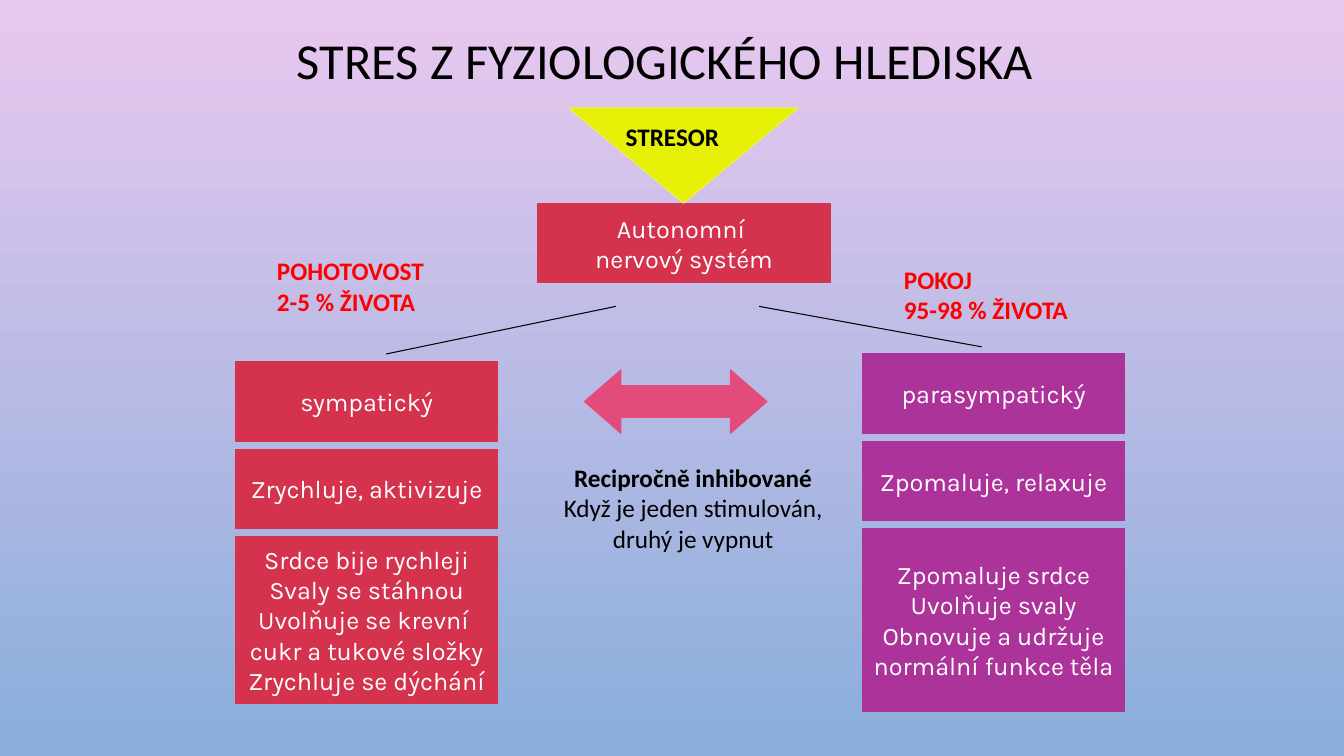
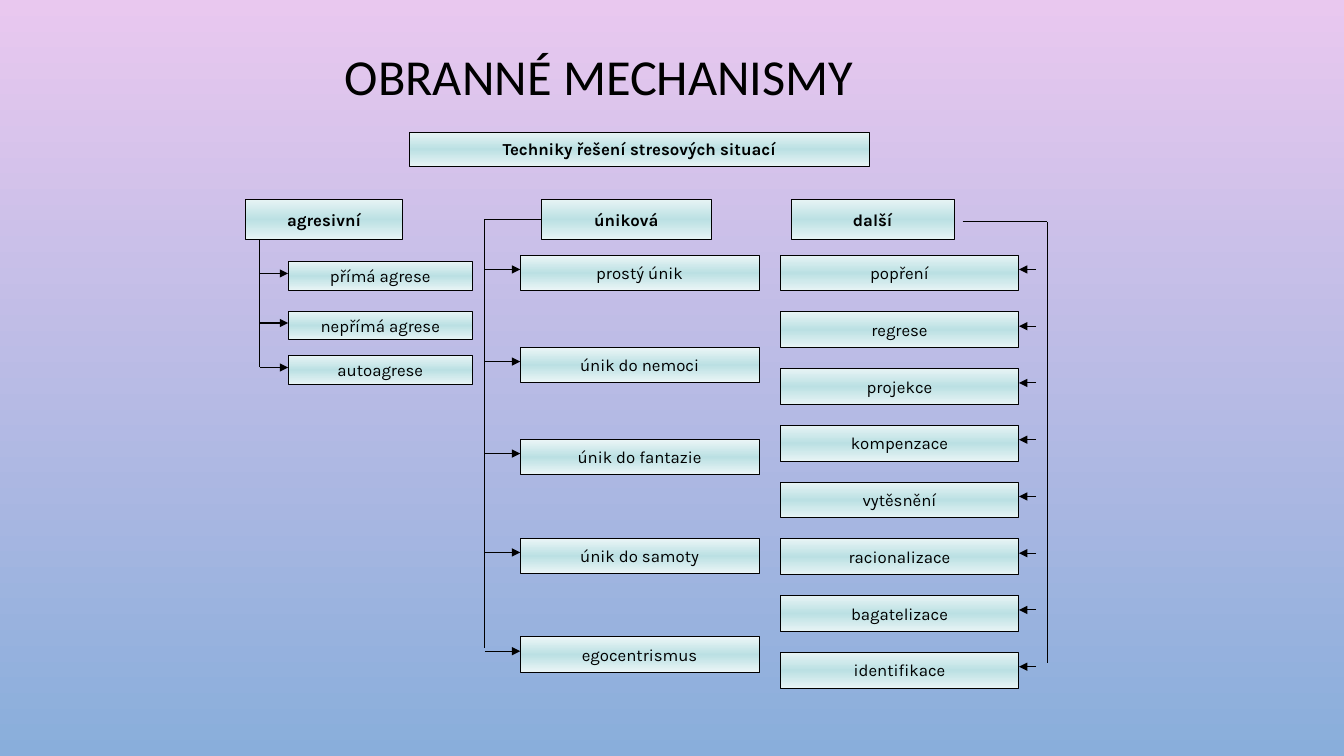
from copy import deepcopy

from lxml import etree
from pptx import Presentation
from pptx.dml.color import RGBColor
from pptx.enum.shapes import MSO_CONNECTOR, MSO_SHAPE
from pptx.enum.text import MSO_ANCHOR, MSO_AUTO_SIZE, PP_ALIGN
from pptx.oxml.ns import qn
from pptx.util import Cm, Pt

RECTANGLE = MSO_SHAPE.RECTANGLE
TRIANGLE = MSO_SHAPE.ISOSCELES_TRIANGLE
DOUBLE_ARROW = MSO_SHAPE.LEFT_RIGHT_ARROW
STRAIGHT = MSO_CONNECTOR.STRAIGHT
LEFT, CENTER = PP_ALIGN.LEFT, PP_ALIGN.CENTER
MIDDLE = MSO_ANCHOR.MIDDLE
GROW = MSO_AUTO_SIZE.SHAPE_TO_FIT_TEXT
TITLE_ONLY = 5
LEFT_SIDE = 1

BLACK = RGBColor(0x00, 0x00, 0x00)
WHITE = RGBColor(0xFF, 0xFF, 0xFF)
RED = RGBColor(0xFF, 0x00, 0x00)
CRIMSON = RGBColor(0xD4, 0x32, 0x4D)
PURPLE = RGBColor(0xAC, 0x33, 0x9A)
PINK = RGBColor(0xE3, 0x4B, 0x7A)
YELLOW = RGBColor(0xE6, 0xF1, 0x07)
PALE_YELLOW = RGBColor(0xEB, 0xF3, 0x4B)
SKY_TOP = RGBColor(0xE9, 0xC8, 0xEF)
SKY_BOTTOM = RGBColor(0x89, 0xAE, 0xDB)
TEAL = RGBColor(0xBB, 0xE0, 0xE3)
PALE_TEAL = RGBColor(0xE7, 0xF4, 0xF5)
PALER_TEAL = RGBColor(0xEC, 0xF6, 0xF7)


def place(shape, left, top, width, height):
    shape.left, shape.top = Cm(left), Cm(top)
    shape.width, shape.height = Cm(width), Cm(height)


def fill_downwards(fill, colors):
    """Colour the stops of a top-to-bottom gradient already on the fill."""
    fill.gradient_angle = 270
    for stop, color in zip(fill.gradient_stops, colors):
        stop.color.rgb = color


class Deck:
    TITLE_FONT = "Calibri"
    BOX_FONT = "Karla"
    LINE_WIDTH = Pt(0.75)

    def __init__(self):
        self.presentation = Presentation()
        self.presentation.slide_width = Cm(33.87)
        self.presentation.slide_height = Cm(19.05)
        background = self.presentation.slide_master.background.fill
        background.gradient()
        fill_downwards(background, (SKY_TOP, SKY_BOTTOM))
        self.slide = None

    def new_slide(self, title, *position):
        layout = self.presentation.slide_layouts[TITLE_ONLY]
        self.slide = self.presentation.slides.add_slide(layout)
        shape = self.slide.shapes.title
        place(shape, *position)
        shape.text_frame.vertical_anchor = MIDDLE
        self.set_text(shape, title, self.TITLE_FONT, 36, BLACK)
        shape.text_frame.paragraphs[0].line_spacing = 0.9

    def set_text(self, shape, text, font, size, color, align=CENTER, bold_lines=0):
        """Fill the shape with text; the first bold_lines lines are bold."""
        shape.text_frame.text = text
        for index, paragraph in enumerate(shape.text_frame.paragraphs):
            paragraph.alignment = align
            for run in paragraph.runs:
                run.font.name = font
                run.font.size = Pt(size)
                run.font.color.rgb = color
                run.font.bold = index < bold_lines

    def shape(self, kind, position, color, line_color=None):
        shape = self.slide.shapes.add_shape(kind, *map(Cm, position))
        shape.shadow.inherit = False
        shape.fill.solid()
        shape.fill.fore_color.rgb = color
        shape.line.color.rgb = line_color or color
        shape.line.width = self.LINE_WIDTH
        return shape

    def panel(self, text, position, color):
        panel = self.shape(RECTANGLE, position, color)
        panel.text_frame.word_wrap = False
        panel.text_frame.vertical_anchor = MIDDLE
        self.set_text(panel, text, self.BOX_FONT, 18, WHITE)

    def panel_stack(self, left, top, color, rows):
        for text, height in rows:
            self.panel(text, (left, top, 6.6, height), color)
            top += height + 0.2

    def gradient_box(self, text, position, edge=PALE_TEAL, bold=False):
        box = self.shape(RECTANGLE, position, TEAL, BLACK)
        box.fill.gradient()
        stops = box._element.spPr.find(qn("a:gradFill")).find(qn("a:gsLst"))
        middle = deepcopy(stops[0])
        middle.set("pos", "50000")
        stops.insert(1, middle)
        fill_downwards(box.fill, (edge, TEAL, edge))
        frame = box.text_frame
        frame.margin_left = frame.margin_right = Cm(0.2)
        frame.margin_top = frame.margin_bottom = Cm(0.1)
        frame.word_wrap = True
        frame.vertical_anchor = MIDDLE
        self.set_text(box, text, self.BOX_FONT, 12, BLACK, bold_lines=int(bold))
        return box

    def label(self, text, position, color=BLACK, align=LEFT, bold_lines=2):
        label = self.slide.shapes.add_textbox(*map(Cm, position))
        label.text_frame.word_wrap = False
        label.text_frame.auto_size = GROW
        self.set_text(label, text, self.TITLE_FONT, 18, color, align, bold_lines)

    def line(self, start_x, start_y, end_x, end_y, arrow=False):
        ends = map(Cm, (start_x, start_y, end_x, end_y))
        connector = self.slide.shapes.add_connector(STRAIGHT, *ends)
        connector.line.color.rgb = BLACK
        connector.line.width = self.LINE_WIDTH
        properties = connector._element.spPr
        if arrow:
            line = properties.find(qn("a:ln"))
            etree.SubElement(line, qn("a:tailEnd"), type="triangle")
        etree.SubElement(properties, qn("a:effectLst"))
        return connector

    def technique_list(self, items, left, size, arrow_start, arrow_end,
                       arrow_drop, edge=PALE_TEAL):
        """Draw (text, top) items as boxes, each with an arrow pointing at it."""
        for text, top in items:
            self.gradient_box(text, (left, top, *size), edge)
            arrow_y = top + arrow_drop
            self.line(arrow_start, arrow_y, arrow_end, arrow_y, arrow=True)


def build_physiology(deck):
    deck.new_slide("STRES Z FYZIOLOGICKÉHO HLEDISKA", 5.33, 0, 22.86, 3.18)
    deck.panel("Autonomní \nnervový systém", (13.54, 5.13, 7.4, 2), CRIMSON)
    deck.line(15.52, 7.72, 9.73, 8.92)
    deck.line(19.13, 7.72, 24.74, 8.74)
    deck.panel_stack(5.94, 9.12, CRIMSON, (
        ("sympatický", 2),
        ("Zrychluje, aktivizuje", 2),
        ("Srdce bije rychleji\nSvaly se stáhnou\nUvolňuje se krevní \n"
         "cukr a tukové složky\nZrychluje se dýchání", 4.2),
    ))
    deck.panel_stack(21.74, 8.92, PURPLE, (
        ("parasympatický", 2),
        ("Zpomaluje, relaxuje", 2),
        ("Zpomaluje srdce\nUvolňuje svaly\nObnovuje a udržuje\n"
         "normální funkce těla", 4.6),
    ))
    deck.label("Recipročně inhibované\nKdyž je jeden stimulován, \n"
               "druhý je vypnut", (13.89, 11.53, 7.16, 2.57),
               align=CENTER, bold_lines=1)
    arrow = deck.shape(DOUBLE_ARROW, (14.73, 9.32, 4.6, 1.6), PINK)
    arrow.adjustments[0] = 0.5
    arrow.adjustments[1] = 0.575
    stressor = deck.shape(TRIANGLE, (14.33, 2.72, 5.79, 2.4), YELLOW, PALE_YELLOW)
    stressor.rotation = 180
    deck.label("STRESOR", (15.52, 2.92, 2.97, 1.02))
    deck.label("POHOTOVOST\n2-5 % ŽIVOTA", (6.73, 6.32, 4.45, 1.8), RED)
    deck.label("POKOJ\n95-98 % ŽIVOTA", (22.53, 6.53, 5.13, 1.8), RED)


def build_defences(deck):
    deck.new_slide("OBRANNÉ MECHANISMY", 5.21, 0.71, 19.79, 2.57)
    heading_top, heading_height = 5.03, 1
    deck.gradient_box("Techniky řešení stresových situací",
                      (10.31, 3.33, 11.61, 0.86), bold=True)
    headings = {
        text: deck.gradient_box(
            text, (left, heading_top, width, heading_height), bold=True)
        for text, left, width in (("agresivní", 6.2, 3.94),
                                  ("úniková", 13.64, 4.29),
                                  ("další", 19.94, 4.11))
    }
    heading_middle = heading_top + heading_height / 2

    aggressive_trunk = 6.55
    deck.line(aggressive_trunk, heading_top + heading_height,
              aggressive_trunk, 9.26)
    aggressive = (("přímá agrese", 6.6), ("nepřímá agrese", 7.85),
                  ("autoagrese", 8.97))
    deck.technique_list(aggressive, 7.26, (4.65, 0.71),
                        aggressive_trunk, 7.26, 0.29)

    escape_trunk = 12.22
    escape = (("prostý únik", 6.43), ("únik do nemoci", 8.75),
              ("únik do fantazie", 11.07), ("únik do samoty", 13.56),
              ("egocentrismus", 16.05))
    deck.technique_list(escape, 13.11, (6.02, 0.9),
                        escape_trunk, 13.11, 0.36, PALER_TEAL)
    branch = deck.line(13.64, heading_middle, escape_trunk, heading_middle)
    branch.begin_connect(headings["úniková"], LEFT_SIDE)
    deck.line(escape_trunk, heading_middle, escape_trunk, 16.33)

    other_trunk, other_top = 26.39, 5.59
    others = ("popření", "regrese", "projekce", "kompenzace", "vytěsnění",
              "racionalizace", "bagatelizace", "identifikace")
    deck.technique_list(
        [(text, 6.43 + 1.43 * row) for row, text in enumerate(others)],
        19.66, (6.02, 0.9), 26.11, 25.68, 0.36)
    deck.line(24.26, other_top, other_trunk, other_top)
    deck.line(other_trunk, other_top, other_trunk, 16.71)


def main():
    deck = Deck()
    build_physiology(deck)
    build_defences(deck)
    deck.presentation.save("out.pptx")


if __name__ == "__main__":
    main()
